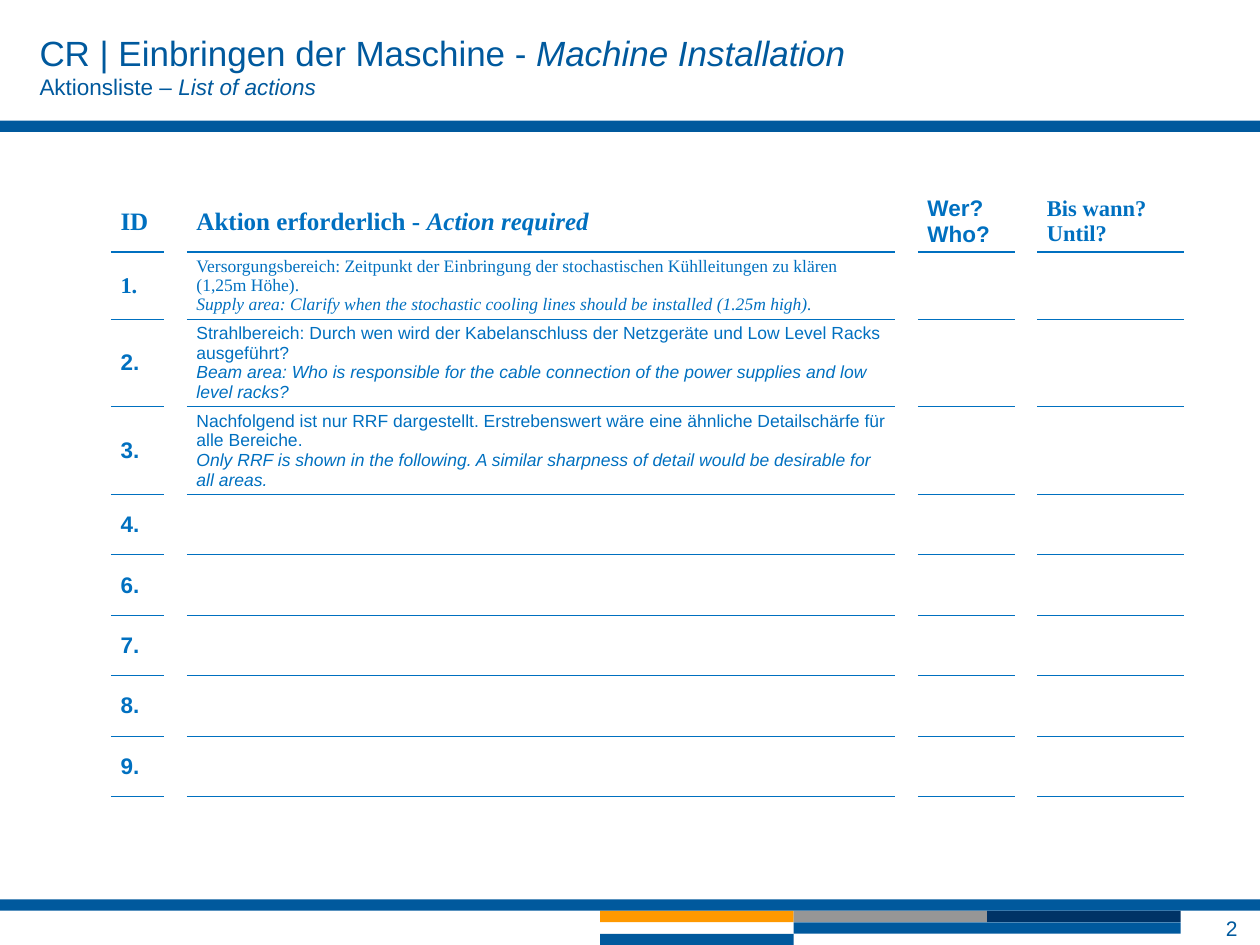
from dataclasses import dataclass

from lxml import etree
from pptx import Presentation, util as u
from pptx.dml.color import RGBColor
from pptx.enum import shapes, text
from pptx.oxml import ns

Pt = u.Pt


@dataclass(frozen=True)
class Theme:
    blue: str = "00599D"
    table_blue: str = "0070C0"
    white: str = "FFFFFF"
    orange: str = "FF9900"
    grey: str = "969696"
    navy: str = "003366"
    sans: str = "Arial"
    serif: str = "Times New Roman"
    title: float = 28
    header: float = 20
    normal: float = 18
    number: float = 16.8
    detail: float = 14


THEME = Theme()
NO_INSETS = dict(margin_left=0, margin_top=0, margin_right=0, margin_bottom=0)

# Each bar: left, top, width, colour
BAR_HEIGHT = 9.2
FOOT_LEFT, FOOT_TOP, FOOT_STEP = 480.2, 719.4, 154.8
BARS = [
    (FOOT_LEFT, FOOT_TOP + BAR_HEIGHT, FOOT_STEP, THEME.orange),
    (FOOT_LEFT + FOOT_STEP, FOOT_TOP + BAR_HEIGHT, FOOT_STEP, THEME.grey),
    (FOOT_LEFT + 2 * FOOT_STEP, FOOT_TOP + BAR_HEIGHT, FOOT_STEP, THEME.navy),
    (0, FOOT_TOP, 1008, THEME.blue),
    (FOOT_LEFT + FOOT_STEP, FOOT_TOP + 2 * BAR_HEIGHT, 2 * FOOT_STEP, THEME.blue),
    (FOOT_LEFT, FOOT_TOP + 3 * BAR_HEIGHT, FOOT_STEP, THEME.blue),
    (0, 96.4, 1008, THEME.blue),
]

# Every second column is an empty gap
COLUMNS = [42.8, 18, 566.8, 18, 77.6, 18, 116.8]
ROW_HEIGHT = 48.4
# Each action: number, typeface, German text, English text
ACTIONS = [
    ("1.", THEME.serif,
     "Versorgungsbereich: Zeitpunkt der Einbringung der stochastischen Kühlleitungen zu klären (1,25m Höhe).",
     "Supply area: Clarify when the stochastic cooling lines should be installed (1.25m high)."),
    ("2.", THEME.sans,
     "Strahlbereich: Durch wen wird der Kabelanschluss der Netzgeräte und Low Level Racks ausgeführt?",
     "Beam area: Who is responsible for the cable connection of the power supplies and low level racks?"),
    ("3.", THEME.sans,
     "Nachfolgend ist nur RRF dargestellt. Erstrebenswert wäre eine ähnliche Detailschärfe für alle Bereiche.",
     "Only RRF is shown in the following. A similar sharpness of detail would be desirable for all areas."),
]
OPEN_NUMBERS = ["4.", "6.", "7.", "8.", "9."]


def apply(target, values):
    for name, value in values.items():
        setattr(target, name, value)


def write(frame, paragraphs, size, colour, face=THEME.sans, bold=False,
          align=text.PP_ALIGN.LEFT):
    """Fill a frame; each paragraph is a list of (words, italic) spans."""
    for index, spans in enumerate(paragraphs):
        para = frame.paragraphs[0] if index == 0 else frame.add_paragraph()
        para.alignment = align
        for words, italic in spans:
            span = para.add_run()
            span.text = words
            apply(span.font, dict(name=face, size=Pt(size), bold=bold, italic=italic))
            span.font.color.rgb = RGBColor.from_string(colour)


def place(box, left, top, width, height, **frame_format):
    apply(box, dict(left=Pt(left), top=Pt(top), width=Pt(width), height=Pt(height)))
    apply(box.text_frame, dict(word_wrap=True, auto_size=text.MSO_AUTO_SIZE.NONE,
                               **frame_format))
    return box.text_frame


def add_bar(page, left, top, width, colour):
    bar = page.shapes.add_shape(shapes.MSO_SHAPE.RECTANGLE, Pt(left), Pt(top),
                                Pt(width), Pt(BAR_HEIGHT))
    bar.shadow.inherit = False
    bar.fill.solid()
    bar.fill.fore_color.rgb = RGBColor.from_string(colour)
    bar.line.fill.background()


def add_border(cell, side, colour):
    properties = cell._tc.get_or_add_tcPr()
    line = etree.SubElement(properties, ns.qn(f"a:ln{side}"), w=str(Pt(1)))
    fill = etree.SubElement(line, ns.qn("a:solidFill"))
    etree.SubElement(fill, ns.qn("a:srgbClr"), val=colour)


def format_cell(cell, row, column):
    if column == 0:
        add_border(cell, "L", THEME.white)
    if column % 2 == 0:
        add_border(cell, "T", THEME.table_blue if row else THEME.white)
        add_border(cell, "B", THEME.table_blue)
    cell.fill.background()
    cell.vertical_anchor = text.MSO_ANCHOR.MIDDLE


def add_action_table(page):
    row_count = 1 + len(ACTIONS) + len(OPEN_NUMBERS)
    table = page.shapes.add_table(row_count, len(COLUMNS), Pt(89.2), Pt(153.2),
                                  Pt(sum(COLUMNS)), Pt(row_count * ROW_HEIGHT)).table
    apply(table, dict(first_row=False, horz_banding=False))
    for column, width in zip(table.columns, COLUMNS):
        column.width = Pt(width)
    for row in range(row_count):
        table.rows[row].height = Pt(ROW_HEIGHT)
        for column in range(len(COLUMNS)):
            format_cell(table.cell(row, column), row, column)

    def fill_cell(row, column, paragraphs, size, face, bold=True):
        write(table.cell(row, column).text_frame, paragraphs, size,
              THEME.table_blue, face, bold)

    # Header row
    fill_cell(0, 0, [[("ID", False)]], THEME.header, THEME.serif)
    fill_cell(0, 2, [[("Aktion erforderlich - ", False), ("Action required", True)]],
              THEME.header, THEME.serif)
    fill_cell(0, 4, [[("Wer? Who?", False)]], THEME.normal, THEME.sans)
    fill_cell(0, 6, [[("Bis wann? Until?", False)]], THEME.normal, THEME.serif)

    # Described actions, then open rows
    for row, (number, face, german, english) in enumerate(ACTIONS, 1):
        fill_cell(row, 0, [[(number, False)]], THEME.normal, face)
        fill_cell(row, 2, [[(german, False)], [(english, True)]],
                  THEME.detail, face, bold=False)
    for row, number in enumerate(OPEN_NUMBERS, 1 + len(ACTIONS)):
        fill_cell(row, 0, [[(number, False)]], THEME.normal, THEME.sans)


def add_headings(page):
    top = text.MSO_ANCHOR.TOP
    frame = place(page.shapes.title, 31.6, 25.2, 949, 54, vertical_anchor=top, **NO_INSETS)
    write(frame, [[("CR | Einbringen der Maschine - ", False),
                   ("Machine Installation", True)]], THEME.title, THEME.blue)
    box = page.shapes.add_textbox(0, 0, 0, 0)
    frame = place(box, 31.6, 58.4, 949, 54, vertical_anchor=top, **NO_INSETS)
    write(frame, [[("Aktionsliste – ", False), ("List of actions", True)]],
          THEME.normal, THEME.blue)


def add_page_number(page):
    box = page.shapes.add_textbox(0, 0, 0, 0)
    frame = place(box, 916.6, 728.6, 80.6, 27.4, margin_top=0, margin_bottom=0,
                  vertical_anchor=text.MSO_ANCHOR.MIDDLE)
    write(frame, [[("2", False)]], THEME.number, THEME.blue, align=text.PP_ALIGN.RIGHT)


def main():
    deck = Presentation()
    apply(deck, dict(slide_width=Pt(1008), slide_height=Pt(756)))
    page = deck.slides.add_slide(deck.slide_layouts[5])

    # Header and footer bars
    for bar in BARS:
        add_bar(page, *bar)

    # Content
    add_action_table(page)
    add_headings(page)
    add_page_number(page)
    deck.save("out.pptx")


if __name__ == "__main__":
    main()
